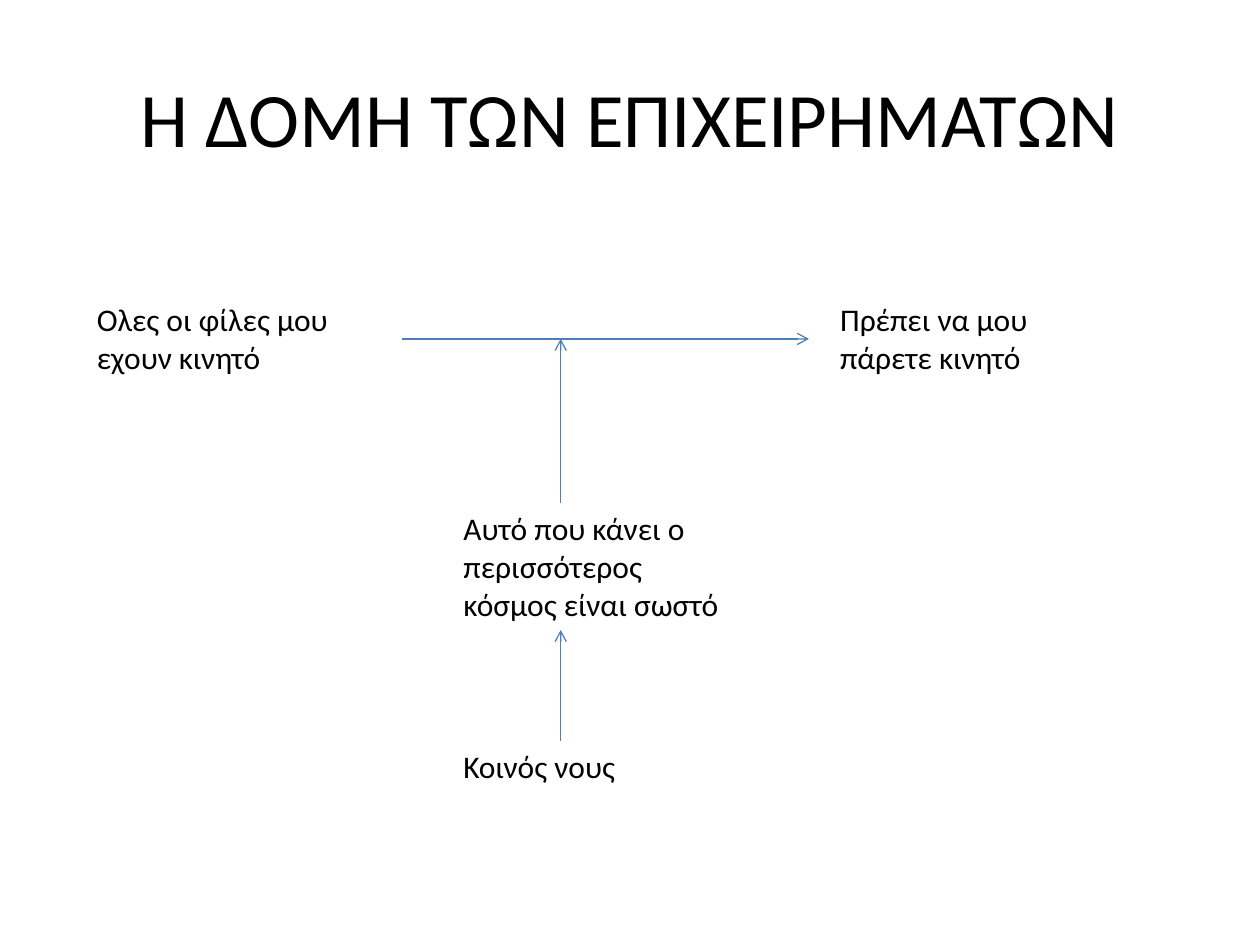
from lxml.etree import SubElement
from pptx import Presentation
from pptx.dml.color import RGBColor
from pptx.enum.shapes import MSO_CONNECTOR
from pptx.enum.text import MSO_ANCHOR, MSO_AUTO_SIZE, PP_ALIGN
from pptx.oxml.ns import qn
from pptx.util import Inches, Pt

COLORS = {"background": "FFFFFF", "text": "000000", "arrow": "4B7EBC"}
FONT = "Calibri"


def add_text(page, text, left, top, width, height, size=18,
             align=PP_ALIGN.LEFT, anchor=MSO_ANCHOR.TOP, grow=True):
    box = page.shapes.add_textbox(Inches(left), Inches(top), Inches(width), Inches(height))
    frame = box.text_frame
    frame.word_wrap = True
    frame.auto_size = MSO_AUTO_SIZE.SHAPE_TO_FIT_TEXT if grow else MSO_AUTO_SIZE.NONE
    frame.vertical_anchor = anchor
    para = frame.paragraphs[0]
    para.alignment = align
    span = para.add_run()
    span.text = text
    span.font.name = FONT
    span.font.size = Pt(size)
    span.font.color.rgb = RGBColor.from_string(COLORS["text"])


def add_arrow(page, start, end):
    x1, y1, x2, y2 = (Inches(value) for value in (*start, *end))
    arrow = page.shapes.add_connector(MSO_CONNECTOR.STRAIGHT, x1, y1, x2, y2)
    arrow.line.color.rgb = RGBColor.from_string(COLORS["arrow"])
    arrow.line.width = Pt(0.75)
    properties = arrow.element.spPr
    SubElement(properties.find(qn("a:ln")), qn("a:tailEnd"), type="arrow")
    SubElement(properties, qn("a:effectLst"))


def add_title(page, left, top, width, height):
    add_text(page, "Η ΔΟΜΗ ΤΩΝ ΕΠΙΧΕΙΡΗΜΑΤΩΝ", left, top, width, height, size=44,
             align=PP_ALIGN.CENTER, anchor=MSO_ANCHOR.MIDDLE, grow=False)


def add_argument(page, left, top):
    """Draw the premise, claim, warrant and backing from a top left corner."""
    support_left = left + 2.91
    support_width = 2.28
    stem = left + 3.78
    axis = top + 0.36
    warrant_top, warrant_height = top + 1.66, 1.01
    backing_top = top + 3.55

    # Premise leads to claim
    add_text(page, "Ολες οι φίλες μου εχουν κινητό", left, top, 2.44, 0.71)
    add_arrow(page, (left + 2.52, axis), (left + 5.75, axis))
    add_text(page, "Πρέπει να μου πάρετε κινητό", left + 5.9, top, 1.97, 0.71)

    # Warrant supports the step
    add_text(page, "Αυτό που κάνει ο περισσότερος κόσμος είναι σωστό",
             support_left, warrant_top, support_width, warrant_height)
    add_arrow(page, (stem, warrant_top), (stem, axis))

    # Backing supports the warrant
    add_text(page, "Κοινός νους", support_left, backing_top, support_width, 0.4)
    add_arrow(page, (stem, backing_top), (stem, warrant_top + warrant_height))


def main():
    deck = Presentation()
    deck.slide_width, deck.slide_height = Inches(10), Inches(7.5)
    page = deck.slides.add_slide(deck.slide_layouts[6])
    page.background.fill.solid()
    page.background.fill.fore_color.rgb = RGBColor.from_string(COLORS["background"])
    add_title(page, 0.5, 0.3, 9, 1.25)
    add_argument(page, 0.67, 2.33)
    deck.save("out.pptx")


if __name__ == "__main__":
    main()
